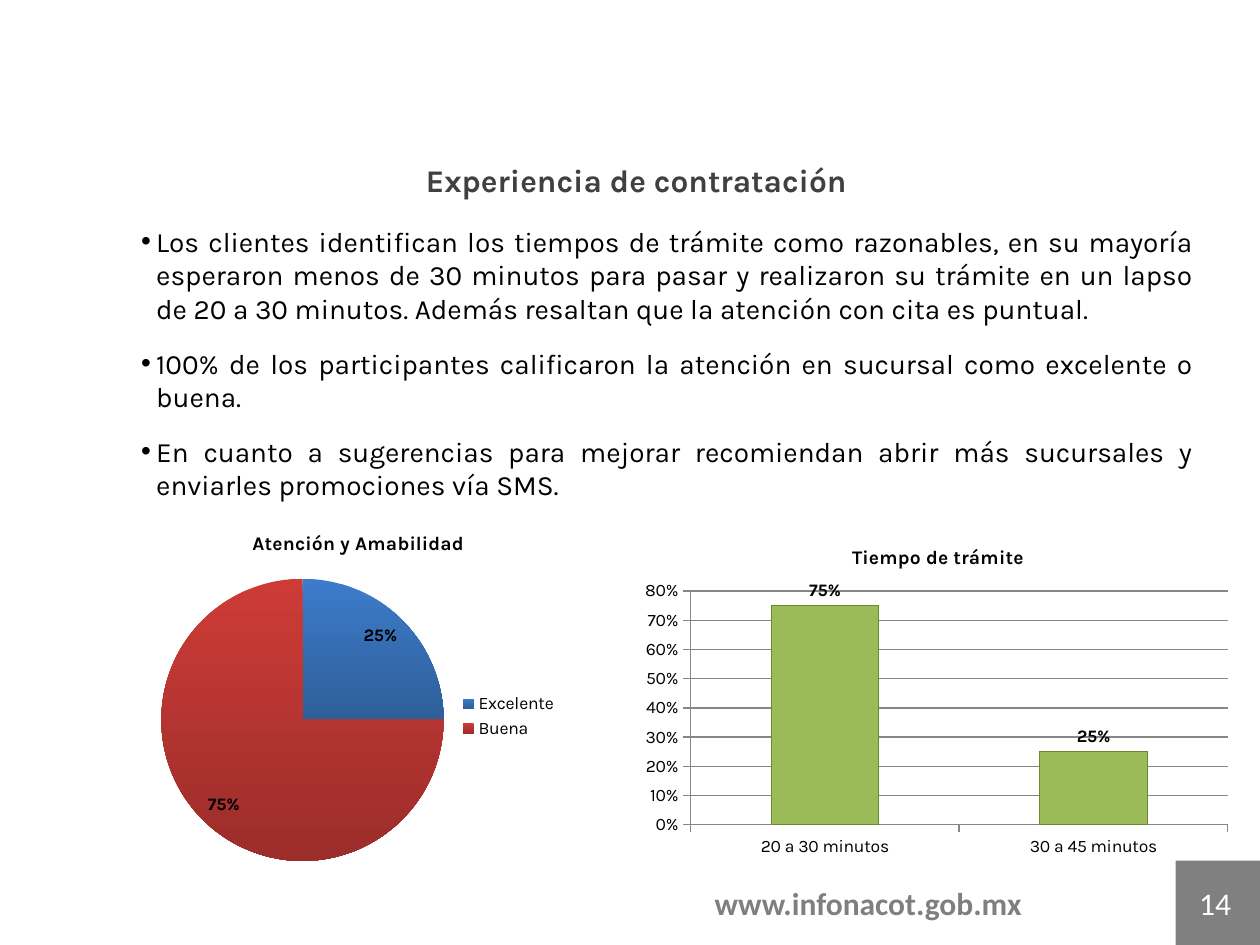
from dataclasses import dataclass

from lxml import etree
from pptx import Presentation
from pptx import util as u
from pptx.chart.data import CategoryChartData
from pptx.dml.color import RGBColor
from pptx.enum import chart as ch
from pptx.enum import shapes, text
from pptx.oxml.ns import qn


@dataclass(frozen=True)
class Theme:
    font: str = "Karla"
    footer_font: str = "Calibri"
    ink: str = "000000"
    heading: str = "404040"
    footer: str = "7F7F7F"
    badge: str = "808080"
    white: str = "FFFFFF"
    grid: str = "868686"
    bar: str = "9BBB59"
    bar_edge: str = "6A8A2F"
    slices: tuple = (("3D7BCB", "2E5F99"), ("CE3B37", "9B2D2A"))
    heading_size: int = 18
    body_size: int = 16
    chart_title_size: int = 11
    chart_size: int = 10


def set_font(font, name, size, color, bold=False):
    values = {"name": name, "size": u.Pt(size), "bold": bold}
    for attribute, value in values.items():
        setattr(font, attribute, value)
    font.color.rgb = RGBColor.from_string(color)


def place(shape, box):
    for side, length in zip(("left", "top", "width", "height"), box):
        setattr(shape, side, u.Inches(length))


def set_layout(parent, index, box, inner=False):
    """Fix a chart part at x, y, w, h, given as fractions of the chart."""
    for old in parent.findall(qn("c:layout")):
        parent.remove(old)
    layout = etree.Element(qn("c:layout"))
    manual = etree.SubElement(layout, qn("c:manualLayout"))
    settings = {"layoutTarget": "inner"} if inner else {}
    settings.update(xMode="edge", yMode="edge")
    settings.update(zip("xywh", box))
    for tag, value in settings.items():
        etree.SubElement(manual, qn(f"c:{tag}")).set("val", str(value))
    parent.insert(index, layout)


class SlideBuilder:
    def __init__(self, slide, theme):
        self.slide = slide
        self.theme = theme

    def fill_text(self, shape, words, font, align=text.PP_ALIGN.CENTER,
                  anchor=text.MSO_ANCHOR.TOP):
        frame = shape.text_frame
        values = {"word_wrap": True, "vertical_anchor": anchor,
                  "auto_size": text.MSO_AUTO_SIZE.NONE}
        for attribute, value in values.items():
            setattr(frame, attribute, value)
        frame.text = words
        for paragraph in frame.paragraphs:
            paragraph.alignment = align
            set_font(paragraph.runs[0].font, *font)
        return frame

    def title(self, box, words):
        t = self.theme
        place(self.slide.shapes.title, box)
        self.fill_text(self.slide.shapes.title, words,
                       (t.font, t.heading_size, t.heading, True))

    def bullets(self, box, items):
        t = self.theme
        body = self.slide.placeholders[1]
        place(body, box)
        frame = self.fill_text(body, "\n".join(items),
                               (t.font, t.body_size, t.ink),
                               text.PP_ALIGN.JUSTIFY)
        for number, paragraph in enumerate(frame.paragraphs):
            properties = paragraph._p.get_or_add_pPr()
            properties.set("marL", str(u.Inches(0.31)))
            properties.set("indent", str(u.Inches(-0.12)))
            etree.SubElement(properties, qn("a:buChar")).set("char", "•")
            spacing = {"line_spacing": 1.0, "space_after": u.Pt(6),
                       "space_before": u.Pt(6 if number else 0)}
            for attribute, value in spacing.items():
                setattr(paragraph, attribute, value)

    def label(self, box, words, color, bold=False, anchor=text.MSO_ANCHOR.TOP):
        t = self.theme
        shape = self.slide.shapes.add_textbox(*map(u.Inches, box))
        self.fill_text(shape, words,
                       (t.footer_font, t.heading_size, color, bold),
                       anchor=anchor)

    def badge(self, box):
        shape = self.slide.shapes.add_shape(
            shapes.MSO_SHAPE.RECTANGLE, *map(u.Inches, box))
        shape.shadow.inherit = False
        shape.fill.solid()
        shape.fill.fore_color.rgb = RGBColor.from_string(self.theme.badge)
        shape.line.fill.background()

    def chart(self, kind, box, name, values, plot_box, label_values):
        """Add a titled one-series chart with bold data labels."""
        t = self.theme
        data = CategoryChartData()
        data.categories = values.keys()
        data.add_series(name, values.values())
        chart = self.slide.shapes.add_chart(
            kind, *map(u.Inches, box), data).chart
        set_font(chart.font, t.font, t.chart_size, t.ink)
        chart.has_title = True
        frame = chart.chart_title.text_frame
        frame.text = name
        set_font(frame.paragraphs[0].runs[0].font,
                 t.font, t.chart_title_size, t.ink, True)
        set_layout(chart._chartSpace.chart.plotArea, 0, plot_box, inner=True)
        plot = chart.plots[0]
        plot.has_data_labels = True
        set_font(plot.data_labels.font, t.font, t.chart_size, t.ink, True)
        label_values = {"number_format": "0%", "number_format_is_linked": False,
                        **label_values}
        for attribute, value in label_values.items():
            setattr(plot.data_labels, attribute, value)
        return chart

    def pie(self, box, name, values):
        chart = self.chart(
            ch.XL_CHART_TYPE.PIE, box, name, values, (0.165, 0.18, 0.48, 0.77),
            {"show_percentage": True, "show_value": False,
             "position": ch.XL_LABEL_POSITION.INSIDE_END})
        chart.plots[0].vary_by_categories = True
        chart.has_legend = True
        chart.legend.position = ch.XL_LEGEND_POSITION.RIGHT
        chart.legend.include_in_layout = False
        set_layout(chart.legend._element, 1, (0.66, 0.48, 0.19, 0.15))
        for number, colors in enumerate(self.theme.slices):
            fill = chart.series[0].points[number].format.fill
            fill.gradient()
            fill.gradient_angle = 270
            for stop, color in zip(fill.gradient_stops, colors):
                stop.color.rgb = RGBColor.from_string(color)

    def columns(self, box, name, values):
        t = self.theme
        chart = self.chart(
            ch.XL_CHART_TYPE.COLUMN_CLUSTERED, box, name, values,
            (0.09, 0.19, 0.89, 0.69),
            {"show_value": True,
             "position": ch.XL_LABEL_POSITION.OUTSIDE_END})
        chart.has_legend = False
        chart.plots[0].vary_by_categories = False
        chart.plots[0].gap_width = 150
        bars = chart.series[0].format
        bars.fill.solid()
        bars.fill.fore_color.rgb = RGBColor.from_string(t.bar)
        bars.line.color.rgb = RGBColor.from_string(t.bar_edge)
        scale = chart.value_axis
        for attribute, value in {"minimum_scale": 0, "maximum_scale": 0.8,
                                 "major_unit": 0.1,
                                 "has_major_gridlines": True}.items():
            setattr(scale, attribute, value)
        scale.tick_labels.number_format = "0%"
        scale.tick_labels.number_format_is_linked = False
        for axis in (scale, chart.category_axis):
            axis.major_tick_mark = ch.XL_TICK_MARK.OUTSIDE
        for line in (scale.format.line, chart.category_axis.format.line,
                     scale.major_gridlines.format.line):
            line.color.rgb = RGBColor.from_string(t.grid)
            line.width = u.Pt(0.75)


def main():
    deck = Presentation()
    deck.slide_width, deck.slide_height = u.Inches(10), u.Inches(7.5)
    page = SlideBuilder(deck.slides.add_slide(deck.slide_layouts[1]), Theme())

    page.label((4.45, 6.97, 4.88, 0.4), "www.infonacot.gob.mx",
               page.theme.footer, bold=True)
    page.badge((9.33, 6.83, 0.67, 0.67))
    page.label((9.33, 6.83, 0.63, 0.67), "14", page.theme.white,
               anchor=text.MSO_ANCHOR.MIDDLE)
    page.bullets((0.83, 1.73, 8.74, 2.32), [
        "Los clientes identifican los tiempos de trámite como razonables, en su "
        "mayoría esperaron menos de 30 minutos para pasar y realizaron su trámite "
        "en un lapso de 20 a 30 minutos. Además resaltan que la atención con cita "
        "es puntual.",
        "100% de los participantes calificaron la atención en sucursal como "
        "excelente o buena.",
        "En cuanto a sugerencias para mejorar recomiendan abrir más sucursales y "
        "enviarles promociones vía SMS.",
    ])
    page.title((1.82, 1.23, 6.46, 0.4), "Experiencia de contratación")
    page.pie((0.51, 4.07, 4.67, 2.91), "Atención y Amabilidad",
             {"Excelente": 25, "Buena": 75})
    page.columns((5.05, 4.18, 4.79, 2.69), "Tiempo de trámite",
                 {"20 a 30 minutos": 0.75, "30 a 45 minutos": 0.25})
    deck.save("out.pptx")


if __name__ == "__main__":
    main()
